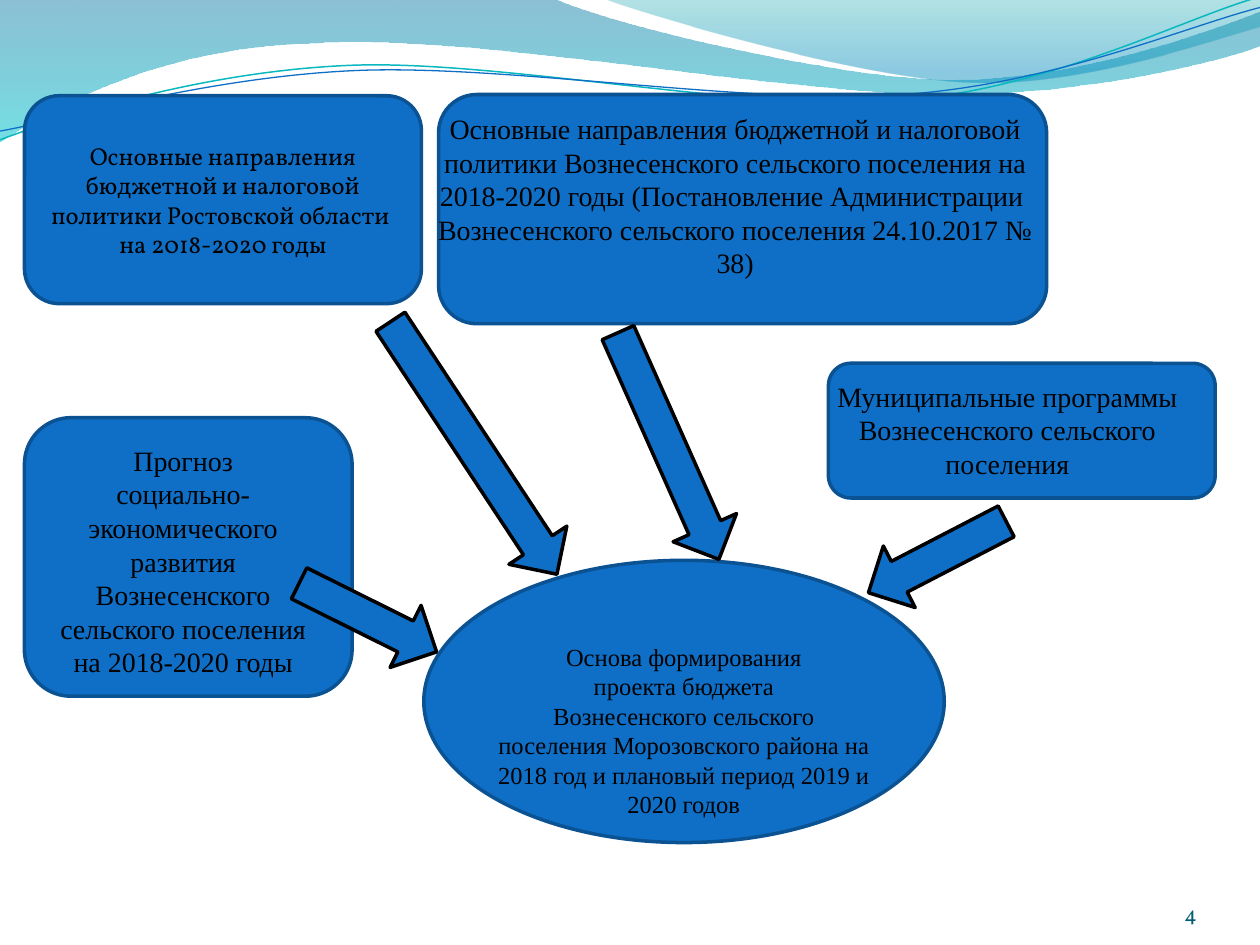
"""Build the slide showing what the settlement budget draft is based on."""
import math

from lxml import etree
from pptx import Presentation
from pptx.dml.color import RGBColor
from pptx.enum import shapes, text
from pptx.oxml.ns import qn
from pptx.util import Pt

COLORS = {
    "blue": "0F6FC6", "edge": "0B5292", "black": "000000", "number": "045D75",
    "teal": "0AB8BF", "deep": "0074A1", "aqua": "00C6CF", "sea": "00A1A9", "sky": "008BBF",
}
SERIF, DISPLAY = "Times New Roman", "Vollkorn"

BANDS = [
    {"start": (0, 0),
     "steps": [[(316.8, -0.7)],
               [(342.7, 12.2), (478.1, 45.4), (545.8, 45.4)],
               [(614.2, 45.4), (689.8, 18.7), (720, 6.5)],
               [(720.7, 25.9)],
               [(707.8, 31.7), (626.4, 54.7), (537.1, 54)],
               [(447.8, 54), (275, 20.2), (185, 24.5)],
               [(92.9, 25.9), (33.1, 59.8), (-0.7, 81.4)]],
     "stops": [(0, "deep", 45), (1, "aqua", 55)]},
    {"start": (344.9, -0.7),
     "steps": [[(366.5, 7.9), (491, 44.6), (553.7, 46.8)],
               [(616.3, 49.7), (691.9, 23), (720, 15.1)],
               [(720, 0)]],
     "stops": [(0, "sea", 30), (0.8, "sky", 45)]},
]
WAVE_TILT = 2.7
WAVES = [
    {"start": (0, 79.9), "color": "teal", "width": 0.85, "center": (359.6, 41.4),
     "steps": [[(34.6, 67), (113.8, 41), (199.4, 37.4)],
               [(284.4, 33.8), (427, 64.1), (513.4, 57.6)],
               [(599.8, 51.1), (675.4, 10.8), (718.6, -1.4)]]},
    {"start": (0, 74.9), "color": "blue", "width": 0.75, "center": (359.6, 42.5),
     "steps": [[(33.8, 69.1), (118.1, 43.9), (203.8, 40.3)],
               [(290.2, 36.7), (429.8, 60.5), (516.2, 54)],
               [(601.9, 48.2), (677.5, 15.1), (720, 4.3)]]},
]

BASIS = (242.2, 320.2, 297.4, 161.3)
REGION = (14, 54.7, 226.8, 118.8)
BOXES = [(14, 238.7, 187.2, 159.1), (473.4, 207.6, 221, 77)]
DIRECTIONS = (250.6, 54, 347.5, 131)
REGION_LINES = ["Основные направления бюджетной и налоговой политики Ростовской области ",
                "на 2018-2020 годы"]
LABELS = [
    ((456.5, 213.1, 238.3, 65.5), 16, 3.6,
     ["Муниципальные программы Вознесенского сельского поселения"]),
    ((19.4, 230.4, 170.6, 162.7), 16, 23,
     ["Прогноз", "социально-", "экономического", "развития",
      "Вознесенского сельского поселения на 2018-2020 годы"]),
    ((276.7, 339.1, 228.2, 133.2), 14, 27.7,
     ["Основа формирования", "проекта бюджета",
      "Вознесенского сельского поселения Морозовского района на 2018 год "
      "и плановый период 2019 и 2020 годов"]),
]
DIRECTIONS_LABEL = (
    (241.9, 60.2, 356.4, 104.4), 16, 3.6,
    ["Основные направления бюджетной и налоговой политики Вознесенского сельского поселения "
     "на 2018-2020 годы (Постановление Администрации  Вознесенского сельского поселения "
     "24.10.2017 № 38)"])
ARROW_WIDTH = 39.6
ARROWS = [(515.8, 274, 88.6, 62.6), (250.9, 169.6, 172.8, 326.6),
          (190.4, 309, 87.8, 296.5), (362.2, 184, 141.8, 336)]
PAGE_NUMBER = (624.2, 500.4, 59.8, 28.8)


def rgb(name):
    return RGBColor.from_string(COLORS[name])


def points(values):
    return [Pt(value) for value in values]


def turn(point, center, degrees):
    dx, dy = point[0] - center[0], point[1] - center[1]
    cos, sin = math.cos(math.radians(degrees)), math.sin(math.radians(degrees))
    return center[0] + dx * cos - dy * sin, center[1] + dx * sin + dy * cos


def add_outline(slide, start, steps, close):
    """Draw one-point steps as lines and three-point steps as Bezier curves."""
    builder = slide.shapes.build_freeform(*points(start))
    builder.add_line_segments([points(p) for step in steps for p in step], close=close)
    shape = builder.convert_to_shape()
    shape.shadow.inherit = False
    segments = iter(list(shape.element.spPr.iter(qn("a:lnTo"))))
    for step in steps:
        nodes = [next(segments) for _ in step]
        if len(step) == 3:
            curve = etree.Element(qn("a:cubicBezTo"))
            nodes[0].addprevious(curve)
            for node in nodes:
                curve.append(node[0])
                node.getparent().remove(node)
    return shape


def add_band(slide, start, steps, stops):
    shape = add_outline(slide, start, steps, True)
    shape.line.fill.background()
    shape.fill.gradient()
    shape.fill.gradient_angle = 270
    for stop, (position, color, _) in zip(shape.fill.gradient_stops, stops):
        stop.position = position
        stop.color.rgb = rgb(color)
    for node, (_, _, opacity) in zip(shape.element.spPr.iter(qn("a:srgbClr")), stops):
        etree.SubElement(node, qn("a:alpha"), val=str(opacity * 1000))


def add_wave(slide, start, steps, color, width, center):
    level = [[turn(p, center, WAVE_TILT) for p in step] for step in steps]
    shape = add_outline(slide, turn(start, center, WAVE_TILT), level, False)
    shape.rotation = 360 - WAVE_TILT
    shape.fill.background()
    shape.line.color.rgb = rgb(color)
    shape.line.width = Pt(width)


def add_block(slide, kind, place, edge="edge", rotation=0):
    shape = slide.shapes.add_shape(kind, *points(place))
    shape.shadow.inherit = False
    shape.fill.solid()
    shape.fill.fore_color.rgb = rgb("blue")
    shape.line.color.rgb = rgb(edge)
    shape.line.width = Pt(2)
    shape.rotation = rotation
    return shape


def write(shape, lines, size, font=SERIF, color="black", align=text.PP_ALIGN.CENTER,
          anchor=text.MSO_ANCHOR.TOP):
    frame = shape.text_frame
    frame.word_wrap = True
    frame.vertical_anchor = anchor
    frame.text = "\n".join(lines)
    for paragraph in frame.paragraphs:
        paragraph.alignment = align
        for run in paragraph.runs:
            run.font.size = Pt(size)
            run.font.name = font
            run.font.color.rgb = rgb(color)
    return frame


def add_label(slide, place, size, inset, lines):
    frame = write(slide.shapes.add_textbox(*points(place)), lines, size)
    frame.margin_top = Pt(inset)


def main():
    presentation = Presentation()
    presentation.slide_width, presentation.slide_height = Pt(720), Pt(540)
    slide = presentation.slides.add_slide(presentation.slide_layouts[6])
    kinds = shapes.MSO_SHAPE
    for band in BANDS:
        add_band(slide, **band)
    for wave in WAVES:
        add_wave(slide, **wave)
    number = write(slide.shapes.add_textbox(*points(PAGE_NUMBER)), ["4"], 12, font=DISPLAY,
                   color="number", align=text.PP_ALIGN.RIGHT, anchor=text.MSO_ANCHOR.BOTTOM)
    number.margin_left = number.margin_right = number.margin_top = number.margin_bottom = 0
    add_block(slide, kinds.OVAL, BASIS)
    region = add_block(slide, kinds.ROUNDED_RECTANGLE, REGION)
    write(region, REGION_LINES, 14, font=DISPLAY, anchor=text.MSO_ANCHOR.MIDDLE)
    for place in BOXES:
        add_block(slide, kinds.ROUNDED_RECTANGLE, place)
    for label in LABELS:
        add_label(slide, *label)
    add_block(slide, kinds.ROUNDED_RECTANGLE, DIRECTIONS)
    add_label(slide, *DIRECTIONS_LABEL)
    for left, top, length, rotation in ARROWS:
        add_block(slide, kinds.DOWN_ARROW, (left, top, ARROW_WIDTH, length), "black", rotation)
    presentation.save("out.pptx")


if __name__ == "__main__":
    main()
